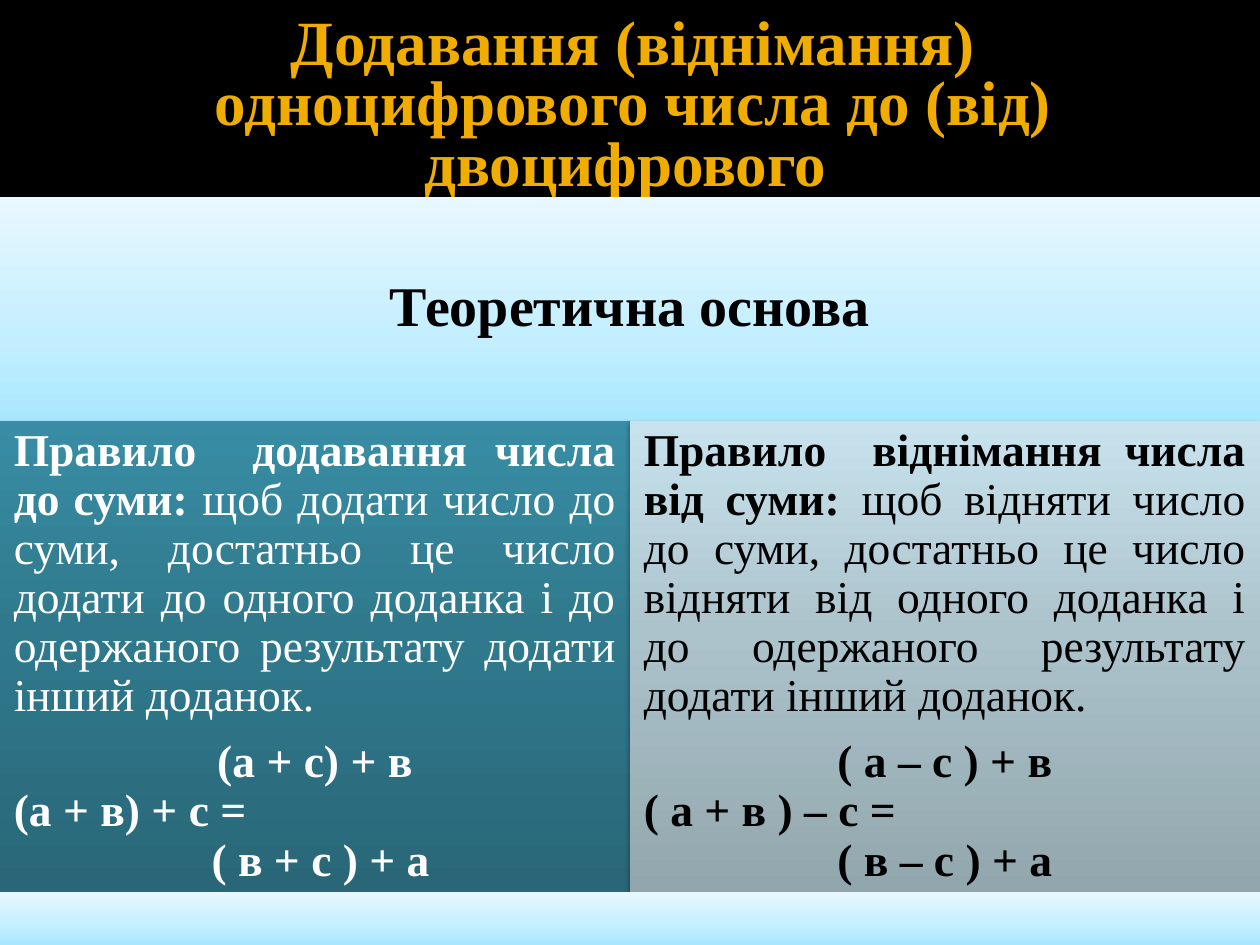
"""Build a slide on adding and subtracting a one-digit number."""
import copy

import lxml.etree
import pptx
import pptx.dml.color
import pptx.enum.shapes
import pptx.enum.text
import pptx.oxml.ns
import pptx.util

Inches, Pt = pptx.util.Inches, pptx.util.Pt
RGBColor = pptx.dml.color.RGBColor
ALIGN = pptx.enum.text.PP_ALIGN
qn = pptx.oxml.ns.qn

BLACK = RGBColor(0x00, 0x00, 0x00)
WHITE = RGBColor(0xFF, 0xFF, 0xFF)
GOLD = RGBColor(0xF0, 0xAD, 0x00)
SKY = [(0, RGBColor(0xA9, 0xE7, 0xFF)), (0.35, RGBColor(0xC2, 0xEE, 0xFF)),
       (1, RGBColor(0xE8, 0xF8, 0xFF))]
TEAL = [(0, RGBColor(0x29, 0x67, 0x78)), (0.55, RGBColor(0x30, 0x79, 0x8D)),
        (1, RGBColor(0x38, 0x8D, 0xA4))]
SILVER = [(0, RGBColor(0x92, 0xA6, 0xAD)), (0.55, RGBColor(0xAC, 0xC3, 0xCC)),
          (1, RGBColor(0xC8, 0xE3, 0xEE))]

FONT = "Times New Roman"
SLIDE_WIDTH, SLIDE_HEIGHT = 10, 7.5
BASIS_TOP, RULES_TOP, FOOTER_TOP = 1.56, 3.34, 7.08

TITLE = "Додавання (віднімання) одноцифрового числа до (від) двоцифрового "
BASIS = "Теоретична основа"
RULES = [
    {"name": "Правило  додавання числа до суми: ",
     "body": "щоб додати число до суми, достатньо це число додати до одного "
             "доданка і до одержаного результату додати інший доданок.",
     "formulas": ["(а + с) + в", "(а + в) + с =", " ( в + с ) + а"],
     "stops": TEAL, "color": WHITE},
    {"name": "Правило  віднімання числа від суми: ",
     "body": "щоб відняти число до суми, достатньо це число відняти від одного "
             "доданка і до одержаного результату додати інший доданок.",
     "formulas": ["( а – с ) + в", "( а + в ) – с =", "( в – с ) + а"],
     "stops": SILVER, "color": BLACK},
]
FORMULA_ALIGNS = [ALIGN.CENTER, ALIGN.LEFT, ALIGN.CENTER]


def add_band(slide, left, top, width, height):
    band = slide.shapes.add_shape(
        pptx.enum.shapes.MSO_SHAPE.RECTANGLE,
        Inches(left), Inches(top), Inches(width), Inches(height))
    band.shadow.inherit = False
    band.line.fill.background()
    return band


def fill_upward(band, stops):
    band.fill.gradient()
    band.fill.gradient_angle = 90
    stop_list = band._element.spPr.find(".//" + qn("a:gsLst"))
    stop_list.append(copy.deepcopy(stop_list[0]))
    for stop, (position, color) in zip(band.fill.gradient_stops, stops):
        stop.position = position
        stop.color.rgb = color


def drop_shadow(band):
    effects = band._element.spPr.find(qn("a:effectLst"))
    shadow = lxml.etree.SubElement(
        effects, qn("a:outerShdw"), blurRad=str(Pt(3.1)), dist=str(Pt(2)),
        dir="5400000", rotWithShape="0")
    color = lxml.etree.SubElement(shadow, qn("a:srgbClr"), val="000000")
    lxml.etree.SubElement(color, qn("a:alpha"), val="38000")


def prepare_frame(shape, left, top, right, bottom):
    frame = shape.text_frame
    frame.word_wrap = True
    frame.vertical_anchor = pptx.enum.text.MSO_ANCHOR.MIDDLE
    frame.margin_left, frame.margin_top = Inches(left), Inches(top)
    frame.margin_right, frame.margin_bottom = Inches(right), Inches(bottom)
    return frame


def write(paragraph, pieces, size, color, align, spacing=0.9):
    paragraph.alignment = align
    paragraph.line_spacing = spacing
    for text, bold in pieces:
        run = paragraph.add_run()
        run.text = text
        run.font.name, run.font.size = FONT, Pt(size)
        run.font.bold, run.font.color.rgb = bold, color


def add_rule(slide, rule, left, width):
    panel = add_band(slide, left, RULES_TOP, width, FOOTER_TOP - RULES_TOP)
    fill_upward(panel, rule["stops"])
    drop_shadow(panel)
    frame = prepare_frame(panel, 0.11, 0.11, 0.11, 0.11)
    statement = frame.paragraphs[0]
    write(statement, [(rule["name"], True), (rule["body"], False)],
          26, rule["color"], ALIGN.JUSTIFY)
    statement.space_after = Pt(9.7)
    for formula, align in zip(rule["formulas"], FORMULA_ALIGNS):
        write(frame.add_paragraph(), [(formula, True)], 26, rule["color"], align)


def main():
    deck = pptx.Presentation()
    deck.slide_width, deck.slide_height = Inches(SLIDE_WIDTH), Inches(SLIDE_HEIGHT)
    slide = deck.slides.add_slide(deck.slide_layouts[6])

    header = add_band(slide, 0, 0, SLIDE_WIDTH, 1.57)
    header.fill.solid()
    header.fill.fore_color.rgb = BLACK
    title = slide.shapes.add_textbox(Inches(0.5), Inches(0.17), Inches(9), Inches(1.37))
    write(prepare_frame(title, 0.1, 0.05, 0.05, 0.05).paragraphs[0],
          [(TITLE, True)], 36, GOLD, ALIGN.CENTER, 0.8)

    basis = add_band(slide, 0, BASIS_TOP, SLIDE_WIDTH, RULES_TOP - BASIS_TOP)
    fill_upward(basis, SKY)
    write(prepare_frame(basis, 0.13, 0.13, 0.13, 0.13).paragraphs[0],
          [(BASIS, True)], 32, BLACK, ALIGN.CENTER)

    rule_width = SLIDE_WIDTH / len(RULES)
    for column, rule in enumerate(RULES):
        add_rule(slide, rule, column * rule_width, rule_width)

    footer = add_band(slide, 0, FOOTER_TOP, SLIDE_WIDTH, SLIDE_HEIGHT - FOOTER_TOP)
    fill_upward(footer, SKY)
    deck.save("out.pptx")


if __name__ == "__main__":
    main()
